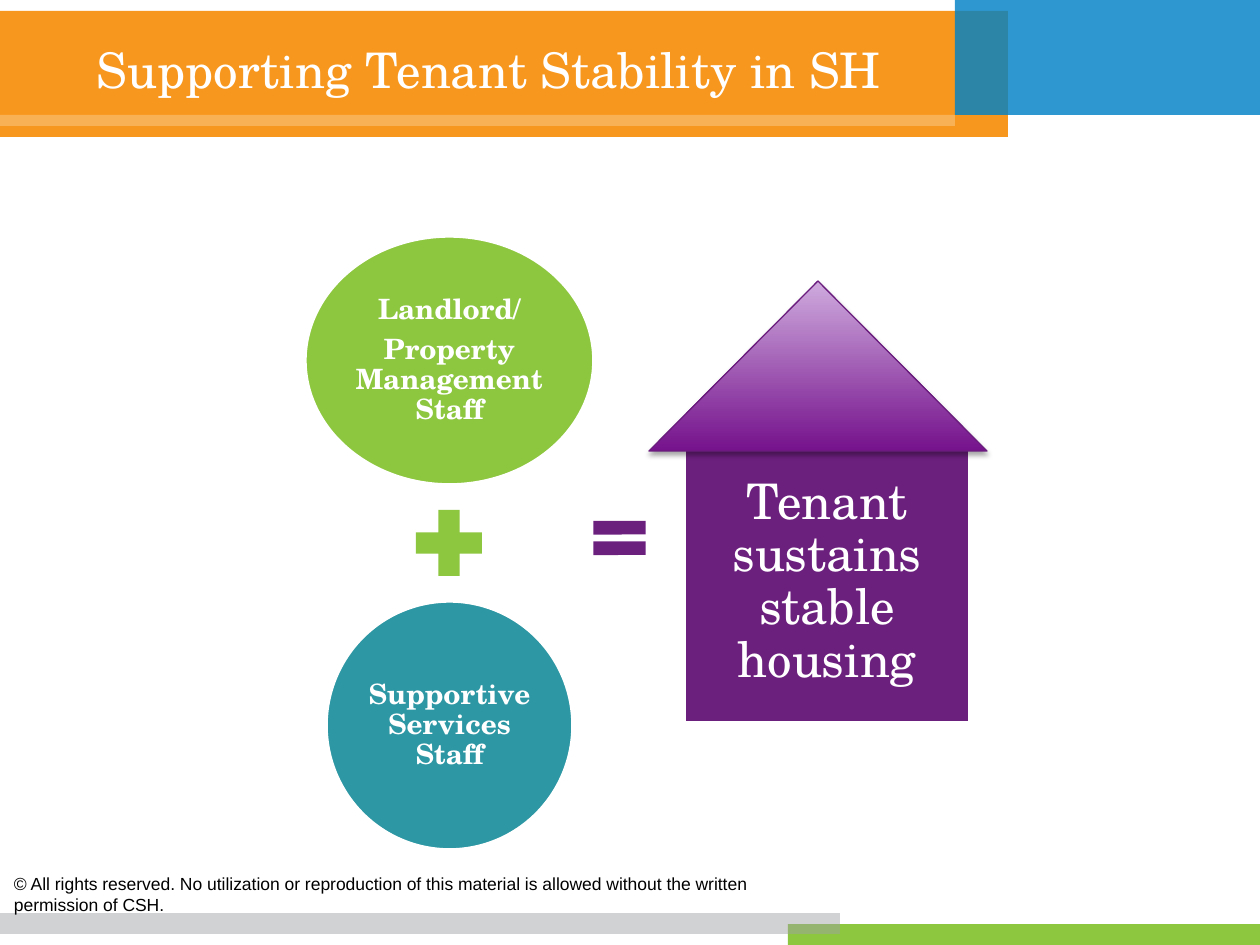
from typing import NamedTuple

from lxml import etree
from pptx import Presentation
from pptx.dml.color import RGBColor
from pptx.enum.shapes import MSO_SHAPE
from pptx.enum.text import MSO_ANCHOR, PP_ALIGN
from pptx.oxml.ns import qn
from pptx.util import Emu, Pt

RECT = MSO_SHAPE.RECTANGLE
OVAL = MSO_SHAPE.OVAL
PLUS = MSO_SHAPE.MATH_PLUS
EQUAL = MSO_SHAPE.MATH_EQUAL
WALL = MSO_SHAPE.FLOWCHART_PROCESS
ROOF = MSO_SHAPE.ISOSCELES_TRIANGLE
MIDDLE, TOP = MSO_ANCHOR.MIDDLE, MSO_ANCHOR.TOP
LEFT, CENTER = PP_ALIGN.LEFT, PP_ALIGN.CENTER

SCALE = 914400 / 126  # EMU in one px
SERIF, SANS = "TeX Gyre Schola", "Arial"
WHITE, BLACK = "FFFFFF", "000000"
ORANGE, BLUE, GREEN, GRAY = "F8971D", "0081C6", "8DC63F", "9FA1A4"
TEAL, PURPLE = "2D97A4", "6C207E"


class Box(NamedTuple):
    x: int
    y: int
    w: int
    h: int


class Band(NamedTuple):
    box: Box
    fill: str
    alpha: int = 100


class Part(NamedTuple):
    kind: int
    box: Box
    fill: str
    lines: tuple[str, ...] = ()
    size: int = 16
    bold: bool = False
    inset: int = 2
    turn: float = 0


BANDS = [
    Band(Box(0, 11, 1008, 126), ORANGE),
    Band(Box(955, 0, 305, 115), BLUE, 82),
    Band(Box(788, 924, 472, 21), GREEN),
    Band(Box(0, 913, 840, 21), GRAY, 48),
    Band(Box(0, 115, 955, 11), WHITE, 25),
]

PARTS = [
    Part(OVAL, Box(305, 236, 289, 249), GREEN,
         ("Landlord/", "Property Management Staff"), bold=True),
    Part(PLUS, Box(404, 498, 90, 90), GREEN),
    Part(OVAL, Box(326, 601, 247, 249), TEAL,
         ("Supportive Services Staff",), bold=True),
    Part(EQUAL, Box(584, 509, 71, 58), PURPLE, turn=359.8),
    Part(WALL, Box(684, 442, 286, 281), PURPLE,
         ("Tenant sustains stable housing",), size=28, inset=5),
]


def px(n: int) -> Emu:
    return Emu(round(n * SCALE))


def rgb(code: str) -> RGBColor:
    return RGBColor.from_string(code)


def place(box: Box) -> list[Emu]:
    return [px(n) for n in box]


def add_shape(slide, kind: int, box: Box):
    shape = slide.shapes.add_shape(kind, *place(box))
    shape.shadow.inherit = False
    shape.line.fill.background()
    return shape


def paint(shape, code: str) -> None:
    shape.fill.solid()
    shape.fill.fore_color.rgb = rgb(code)


def outline(shape, code: str, width: float) -> None:
    shape.line.color.rgb = rgb(code)
    shape.line.width = Pt(width)


def write(shape, lines: tuple[str, ...], size: int, code: str, font: str,
          align: int, anchor: int, pads: tuple[int, int], bold: bool = False) -> None:
    frame = shape.text_frame
    frame.word_wrap = True
    frame.vertical_anchor = anchor
    frame.margin_left = frame.margin_right = px(pads[0])
    frame.margin_top = frame.margin_bottom = px(pads[1])
    frame.text = "\n".join(lines)
    for para in frame.paragraphs:
        para.alignment = align
        para.font.name = font
        para.font.size = Pt(size)
        para.font.bold = bold
        para.font.color.rgb = rgb(code)


def draw_band(slide, band: Band) -> None:
    shape = add_shape(slide, RECT, band.box)
    paint(shape, band.fill)
    if band.alpha < 100:
        tint = shape.fill._xPr.find(".//" + qn("a:srgbClr"))
        etree.SubElement(tint, qn("a:alpha"), val=str(band.alpha * 1000))


def draw_part(slide, part: Part) -> None:
    shape = add_shape(slide, part.kind, part.box)
    paint(shape, part.fill)
    shape.rotation = part.turn
    if part.lines:
        outline(shape, WHITE, 2)
        write(shape, part.lines, part.size, WHITE, SERIF, CENTER, MIDDLE,
              (part.inset, part.inset), part.bold)
        for para in shape.text_frame.paragraphs:
            para.line_spacing = 0.9
            para.space_after = Pt(part.size * 0.35)


def draw_roof(slide, box: Box) -> None:
    shape = add_shape(slide, ROOF, box)
    shape.fill.gradient()
    shape.fill.gradient_angle = 90
    for stop, code in zip(shape.fill.gradient_stops, ("75128C", "CFABDE")):
        stop.color.rgb = rgb(code)
    outline(shape, "6B1D7E", 0.75)
    # Soft shadow straight down
    effects = shape._element.spPr.find(qn("a:effectLst"))
    shade = etree.SubElement(effects, qn("a:outerShdw"), blurRad=str(Pt(3.1)),
                             dist=str(Pt(1.8)), dir="5400000", rotWithShape="0")
    tint = etree.SubElement(shade, qn("a:srgbClr"), val=BLACK)
    etree.SubElement(tint, qn("a:alpha"), val="35000")


def draw_text(slide, box: Box, text: str, size: int, code: str, font: str,
              anchor: int, pads: tuple[int, int]) -> None:
    shape = slide.shapes.add_textbox(*place(box))
    write(shape, (text,), size, code, font, LEFT, anchor, pads)


def main() -> None:
    deck = Presentation()
    deck.slide_width, deck.slide_height = px(1260), px(945)
    slide = deck.slides.add_slide(deck.slide_layouts[6])

    # Header and footer bands
    for band in BANDS:
        draw_band(slide, band)

    # Footer and title
    draw_text(slide, Box(1, 867, 839, 34),
              "© All rights reserved. No utilization or reproduction of this "
              "material is allowed without the written permission of CSH.",
              10, BLACK, SANS, TOP, (13, 6))
    draw_text(slide, Box(84, 32, 829, 73), "Supporting Tenant Stability in SH",
              28, WHITE, SERIF, MIDDLE, (13, 13))

    # Staff plus staff equals a stable house
    for part in PARTS:
        draw_part(slide, part)
    draw_roof(slide, Box(649, 281, 338, 170))

    deck.save("out.pptx")


if __name__ == "__main__":
    main()
